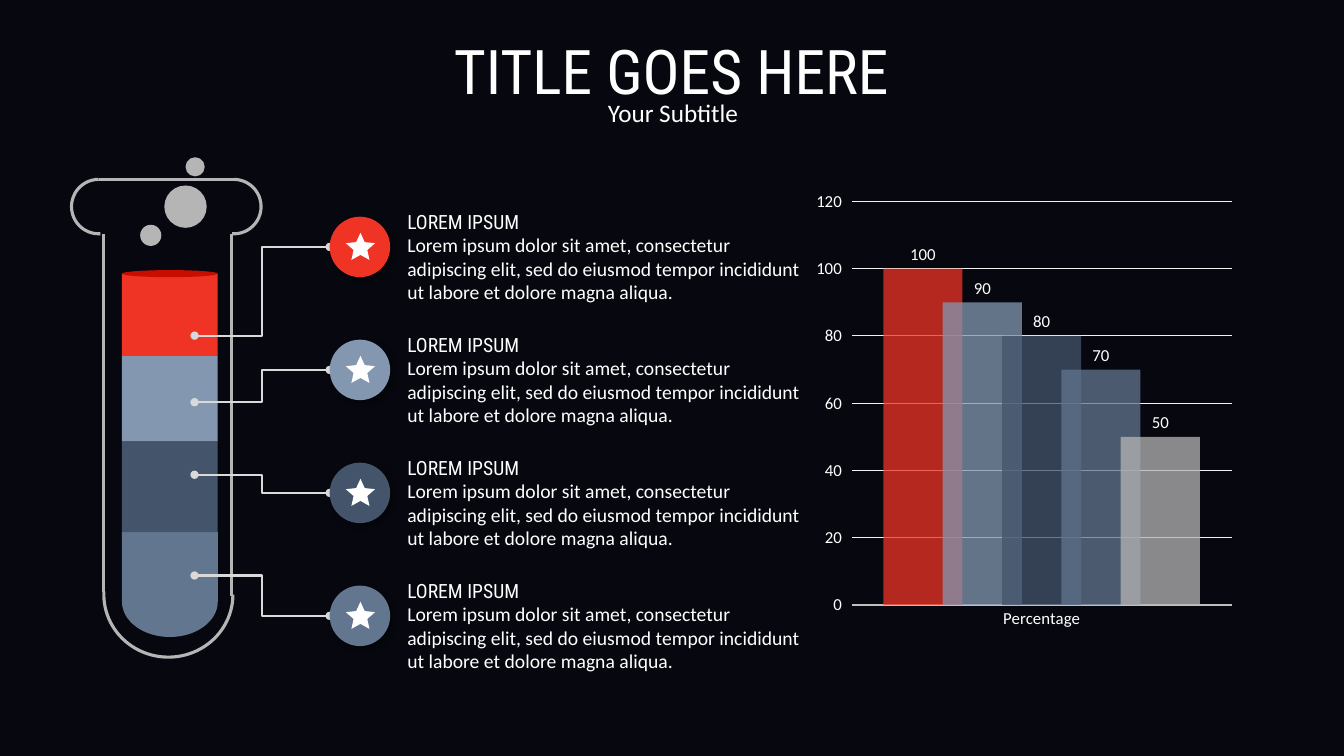
from dataclasses import dataclass
from math import cos, pi, sin
from typing import Any

from lxml.etree import SubElement
from pptx import Presentation
from pptx.chart.data import CategoryChartData
from pptx.dml.color import RGBColor
from pptx.enum.chart import XL_CHART_TYPE, XL_LABEL_POSITION, XL_TICK_LABEL_POSITION, XL_TICK_MARK
from pptx.enum.shapes import MSO_CONNECTOR, MSO_SHAPE
from pptx.enum.text import MSO_ANCHOR, MSO_AUTO_SIZE, PP_ALIGN
from pptx.oxml.ns import qn
from pptx.util import Emu, Pt

PX = 9144  # 100 px to the inch


@dataclass(frozen=True)
class Theme:
    background: str = "07080F"
    white: str = "FFFFFF"
    red: str = "EF3425"
    dark_red: str = "C70C00"
    light_blue: str = "8397B1"
    navy: str = "44546B"
    steel: str = "62768F"
    glass: str = "B5B5B5"
    callout: str = "D9D9D9"
    axis: str = "BFBFBF"
    grid: str = "F2F2F2"
    heading_font: str = "Roboto Condensed"
    body_font: str = "Calibri"
    title_size: int = 44
    subtitle_size: int = 18
    item_size: int = 14
    chart_size: int = 12


THEME = Theme()


@dataclass(frozen=True)
class Box:
    left: int
    top: int
    width: int
    height: int

    def emu(self) -> tuple[Emu, ...]:
        return tuple(Emu(v * PX) for v in (self.left, self.top, self.width, self.height))


@dataclass(frozen=True)
class Item:
    color: str
    callout_y: int
    heading: str = "LOREM IPSUM"
    body: str = ("Lorem ipsum dolor sit amet, consectetur adipiscing elit, sed do eiusmod "
                 "tempor incididunt ut labore et dolore magna aliqua.")


@dataclass(frozen=True)
class Column:
    name: str
    value: int
    color: str


ITEMS = [Item(THEME.red, 333), Item(THEME.light_blue, 399),
         Item(THEME.navy, 471), Item(THEME.steel, 571)]
ITEM_TOP, ITEM_STEP, CIRCLE = 215, 122, 60
LIQUIDS = [
    (MSO_SHAPE.RECTANGLE, Box(121, 438, 95, 90), THEME.navy),
    (MSO_SHAPE.RECTANGLE, Box(121, 353, 95, 85), THEME.light_blue),
    (MSO_SHAPE.RECTANGLE, Box(121, 272, 95, 81), THEME.red),
    (MSO_SHAPE.OVAL, Box(121, 268, 95, 7), THEME.dark_red),
]
GLASS_ARCS = [  # box, rotation, arc ends
    (Box(105, 526, 124, 128), 90, (162, 55.82)),
    (Box(205, 178, 54, 54), 0, (162, 56.2)),
    (Box(71, 178, 54, 54), 0, (51.8, 162)),
]
GLASS_LINES = [(103, 587, 103, 232), (230, 591, 230, 232), (232, 178, 98, 178)]
BUBBLES = [Box(163, 184, 42, 42), Box(139, 223, 21, 21), Box(184, 156, 19, 19)]
COLUMNS = [Column("Series 1", 100, THEME.red), Column("Series 2", 90, THEME.light_blue),
           Column("Series 3", 80, THEME.navy), Column("Series 4", 70, THEME.steel),
           Column("Series 5", 50, THEME.glass)]


def assign(target: Any, values: dict[str, Any]) -> None:
    for name, value in values.items():
        setattr(target, name, value)


def style_font(font: Any, name: str, size: int) -> None:
    assign(font, {"name": name, "size": Pt(size), "bold": False})
    font.color.rgb = RGBColor.from_string(THEME.white)


def paint(fill: Any, color: str) -> None:
    fill.solid()
    fill.fore_color.rgb = RGBColor.from_string(color)


def style_line(line: Any, color: str, width: float) -> None:
    paint(line.fill, color)
    line.width = Pt(width)


def add_filled(slide: Any, kind: MSO_SHAPE, box: Box, color: str) -> Any:
    shape = slide.shapes.add_shape(kind, *box.emu())
    shape.shadow.inherit = False
    paint(shape.fill, color)
    shape.line.fill.background()
    return shape


def add_line(slide: Any, kind: MSO_CONNECTOR, ends: tuple[int, ...], color: str, width: float) -> Any:
    connector = slide.shapes.add_connector(kind, *(Emu(v * PX) for v in ends))
    style_line(connector.line, color, width)
    SubElement(connector._element.spPr, qn("a:effectLst"))
    return connector


def add_headline(shape: Any, box: Box, text: str, font: str, size: int) -> None:
    assign(shape, dict(zip(("left", "top", "width", "height"), box.emu())))
    frame = shape.text_frame
    assign(frame, {"text": text, "word_wrap": True, "auto_size": MSO_AUTO_SIZE.NONE,
                   "vertical_anchor": MSO_ANCHOR.TOP})
    paragraph = frame.paragraphs[0]
    assign(paragraph, {"alignment": PP_ALIGN.CENTER, "space_before": Pt(0)})
    style_font(paragraph.runs[0].font, font, size)


def add_tube(slide: Any) -> None:
    # Rounded bottom liquid
    steps = 32
    outline = [(168.5 + 47.5 * cos(pi * i / steps), 597 + 35 * sin(pi * i / steps))
               for i in range(steps + 1)]
    builder = slide.shapes.build_freeform(216 * PX, 528 * PX)
    builder.add_line_segments([(x * PX, y * PX) for x, y in outline + [(121, 528)]])
    bottom = builder.convert_to_shape()
    bottom.shadow.inherit = False
    paint(bottom.fill, THEME.steel)
    bottom.line.fill.background()
    # Layers, glass and bubbles
    for kind, box, color in LIQUIDS:
        add_filled(slide, kind, box, color)
    for box, rotation, ends in GLASS_ARCS:
        arc = slide.shapes.add_shape(MSO_SHAPE.ARC, *box.emu())
        arc.shadow.inherit = False
        arc.rotation = rotation
        arc.adjustments[0], arc.adjustments[1] = ends
        arc.fill.background()
        style_line(arc.line, THEME.glass, 2.25)
    for ends in GLASS_LINES:
        add_line(slide, MSO_CONNECTOR.STRAIGHT, ends, THEME.glass, 2.25)
    for box in BUBBLES:
        add_filled(slide, MSO_SHAPE.OVAL, box, THEME.glass)


def add_item(slide: Any, item: Item, top: int) -> None:
    # Callout line
    ends = (193, item.callout_y, 327, top + CIRCLE // 2)
    callout = add_line(slide, MSO_CONNECTOR.ELBOW, ends, THEME.callout, 1.5)
    for end in ("a:headEnd", "a:tailEnd"):
        SubElement(callout.line._get_or_add_ln(), qn(end), type="oval")
    # Shadowed circle and star
    circle = add_filled(slide, MSO_SHAPE.OVAL, Box(327, top, CIRCLE, CIRCLE), item.color)
    effects = circle._element.spPr.find(qn("a:effectLst"))
    shadow = SubElement(effects, qn("a:outerShdw"), blurRad=str(Pt(4)), dist=str(Pt(3)), dir="2700000")
    shade = SubElement(shadow, qn("a:srgbClr"), val="000000")
    SubElement(shade, qn("a:alpha"), val="40000")
    star = add_filled(slide, MSO_SHAPE.STAR_5_POINT, Box(343, top + 16, 29, 27), THEME.white)
    star.adjustments[0] = 0.235
    # Heading and body
    frame = slide.shapes.add_textbox(*Box(397, top - 10, 404, 104).emu()).text_frame
    assign(frame, {"word_wrap": True, "margin_left": 7 * PX, "margin_right": 7 * PX,
                   "margin_top": 3 * PX, "margin_bottom": 3 * PX})
    frame.text = f"{item.heading}\n{item.body}"
    for paragraph, font in zip(frame.paragraphs, (THEME.heading_font, THEME.body_font)):
        style_font(paragraph.runs[0].font, font, THEME.item_size)


def add_column_chart(slide: Any) -> None:
    data = CategoryChartData()
    data.categories = ["Percentage"]
    for column in COLUMNS:
        data.add_series(column.name, [column.value])
    chart = slide.shapes.add_chart(XL_CHART_TYPE.COLUMN_CLUSTERED, *Box(801, 181, 429, 452).emu(), data).chart
    assign(chart, {"has_legend": False, "has_title": False})
    style_font(chart.font, THEME.body_font, THEME.chart_size)
    # Axes
    for axis in (chart.category_axis, chart.value_axis):
        assign(axis, {"major_tick_mark": XL_TICK_MARK.NONE, "minor_tick_mark": XL_TICK_MARK.NONE})
        style_font(axis.tick_labels.font, THEME.body_font, THEME.chart_size)
    style_line(chart.category_axis.format.line, THEME.axis, 1.25)
    values = chart.value_axis
    assign(values, {"minimum_scale": 0, "maximum_scale": 120, "major_unit": 20,
                    "tick_label_position": XL_TICK_LABEL_POSITION.LOW})
    values.format.line.fill.background()
    style_line(values.major_gridlines.format.line, THEME.grid, 0.75)
    # Translucent columns with value labels
    plot = chart.plots[0]
    assign(plot, {"gap_width": 80, "overlap": 25, "vary_by_categories": False})
    for series, column in zip(plot.series, COLUMNS):
        paint(series.format.fill, column.color)
        color = next(series._element.iter(qn("a:srgbClr")))
        SubElement(color, qn("a:alpha"), val="75000")
        labels = series.data_labels
        assign(labels, {"show_value": True, "position": XL_LABEL_POSITION.OUTSIDE_END})
        style_font(labels.font, THEME.body_font, THEME.chart_size)


def main() -> None:
    presentation = Presentation()
    assign(presentation, {"slide_width": Emu(1333 * PX), "slide_height": Emu(750 * PX)})
    slide = presentation.slides.add_slide(presentation.slide_layouts[0])
    paint(slide.background.fill, THEME.background)
    title, subtitle = slide.placeholders
    add_headline(title, Box(365, 28, 602, 84), "TITLE GOES HERE", THEME.heading_font, THEME.title_size)
    add_headline(subtitle, Box(441, 92, 453, 40), "Your Subtitle", THEME.body_font, THEME.subtitle_size)
    add_tube(slide)
    add_column_chart(slide)
    for index, item in enumerate(ITEMS):
        add_item(slide, item, ITEM_TOP + index * ITEM_STEP)
    presentation.save("out.pptx")


if __name__ == "__main__":
    main()
